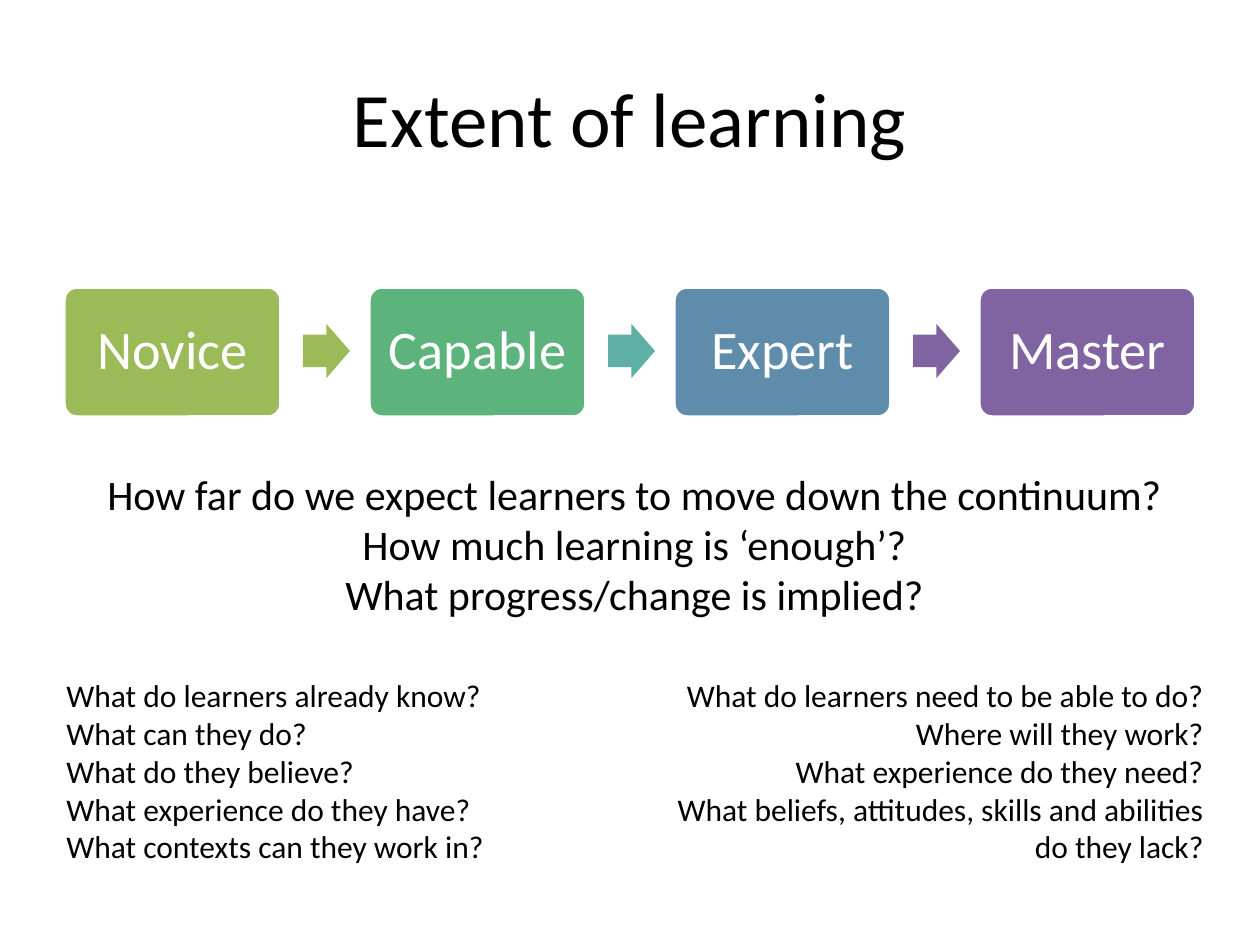
from pptx import Presentation
from pptx.dml.color import RGBColor
from pptx.enum.shapes import MSO_SHAPE
from pptx.enum.text import MSO_ANCHOR, PP_ALIGN
from pptx.util import Pt

PX = 914400 / 126  # EMU in one px
THEME = {
    "font": "Calibri", "ink": "000000", "paper": "FFFFFF",
    "title": 44, "stage": 31, "lead": 24, "note": 18,
    "boxes": ["9BBB59", "5CB37C", "608CAB", "8064A2"],
    "arrows": ["9BBB59", "5EAFA6", "8064A2"],
}


def px(*nums):
    return [round(n * PX) for n in nums]


def write(shape, lines, size, color=THEME["ink"], align=PP_ALIGN.LEFT,
          anchor=MSO_ANCHOR.TOP, inset=None, spacing=None):
    frame = shape.text_frame
    frame.word_wrap = True
    frame.vertical_anchor = anchor
    if inset is not None:
        (pad,) = px(inset)
        frame.margin_left = frame.margin_right = pad
        frame.margin_top = frame.margin_bottom = pad
    frame.text = "\n".join(lines)
    for para in frame.paragraphs:
        para.alignment = align
        para.line_spacing = spacing
        for run in para.runs:
            run.font.name = THEME["font"]
            run.font.size = Pt(size)
            run.font.color.rgb = RGBColor.from_string(color)


deck = Presentation()
deck.slide_width, deck.slide_height = px(1260, 945)
slide = deck.slides.add_slide(deck.slide_layouts[5])
shapes = slide.shapes

# Title
title = shapes.title
title.left, title.top, title.width, title.height = px(63, 38, 1134, 157)
write(title, ["Extent of learning"], THEME["title"],
      align=PP_ALIGN.CENTER, anchor=MSO_ANCHOR.MIDDLE)

# Stages of the continuum
LEFT, STEP = 64, 305
for i, name in enumerate(["Novice", "Capable", "Expert", "Master"]):
    box = shapes.add_shape(MSO_SHAPE.ROUNDED_RECTANGLE,
                           *px(LEFT + i * STEP, 287, 217, 130))
    box.adjustments[0] = 0.1
    box.shadow.inherit = False
    box.fill.solid()
    box.fill.fore_color.rgb = RGBColor.from_string(THEME["boxes"][i])
    box.line.color.rgb = RGBColor.from_string(THEME["paper"])
    box.line.width = Pt(2)
    write(box, [name], THEME["stage"], color=THEME["paper"],
          align=PP_ALIGN.CENTER, anchor=MSO_ANCHOR.MIDDLE, inset=16, spacing=0.9)

# Arrows between the stages
for i, color in enumerate(THEME["arrows"]):
    arrow = shapes.add_shape(MSO_SHAPE.RIGHT_ARROW,
                             *px(LEFT + 239 + i * STEP, 324, 47, 54))
    arrow.adjustments[0] = 0.6
    arrow.adjustments[1] = 0.5
    arrow.shadow.inherit = False
    arrow.fill.solid()
    arrow.fill.fore_color.rgb = RGBColor.from_string(color)
    arrow.line.fill.background()

# Questions: lead, start point, end point
blocks = [
    ((74, 462, 1121, 165), "lead", PP_ALIGN.CENTER, [
        "How far do we expect learners to move down the continuum?",
        "How much learning is ‘enough’?",
        "What progress/change is implied?"]),
    ((54, 670, 536, 242), "note", PP_ALIGN.LEFT, [
        "What do learners already know?",
        "What can they do?",
        "What do they believe?",
        "What experience do they have?",
        "What contexts can they work in?"]),
    ((660, 670, 556, 204), "note", PP_ALIGN.RIGHT, [
        "What do learners need to be able to do?",
        "Where will they work?",
        "What experience do they need?",
        "What beliefs, attitudes, skills and abilities do they lack?"]),
]
for area, size, align, lines in blocks:
    write(shapes.add_textbox(*px(*area)), lines, THEME[size], align=align)

deck.save("out.pptx")
